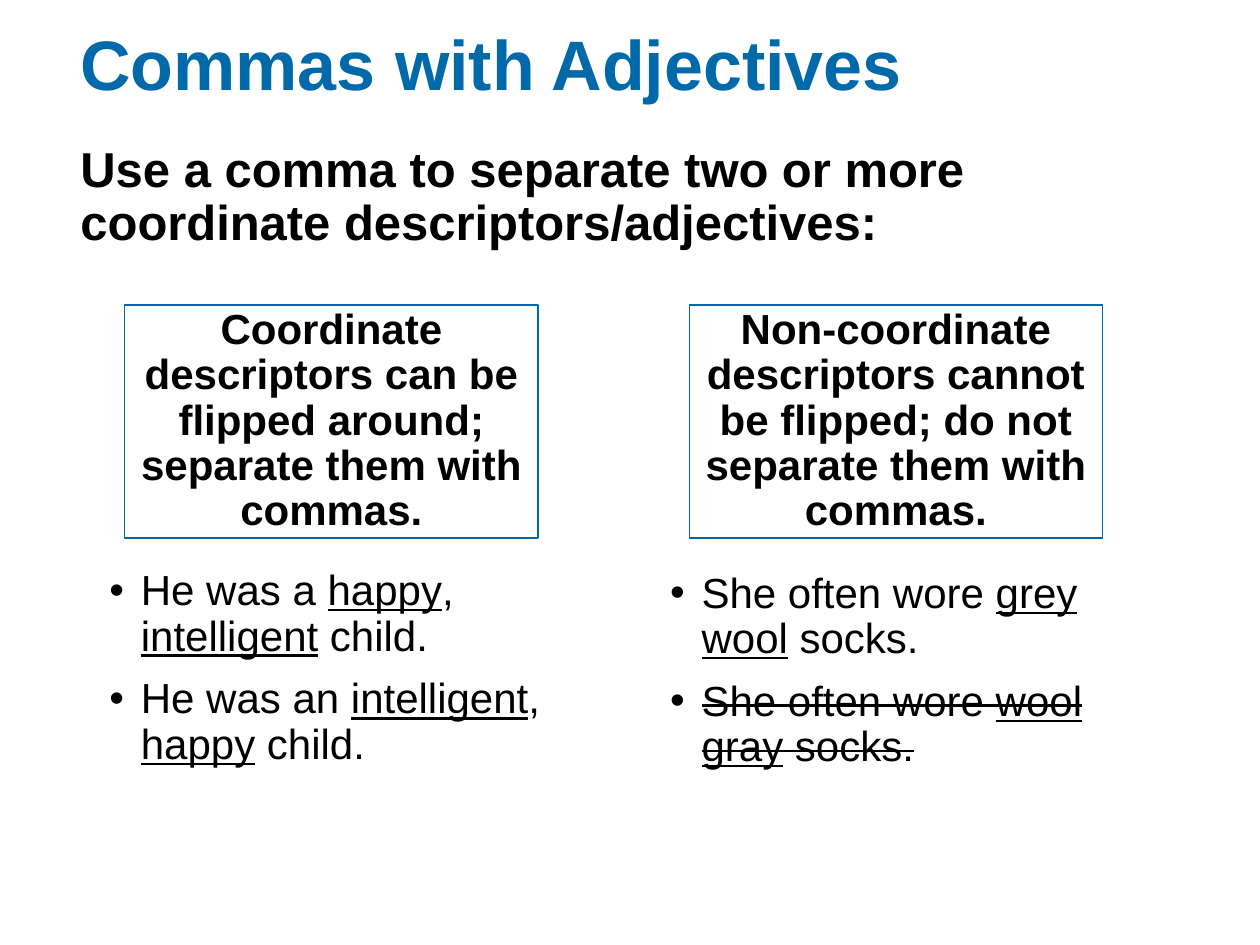
import pptx
import pptx.util
import pptx.dml.color
import pptx.enum.shapes
import pptx.enum.text
from lxml import etree

Inches, Pt = pptx.util.Inches, pptx.util.Pt
RGBColor = pptx.dml.color.RGBColor
Anchor = pptx.enum.text.MSO_ANCHOR
Align = pptx.enum.text.PP_ALIGN

BLUE = RGBColor(0x00, 0x69, 0xAA)
BLACK = RGBColor(0x00, 0x00, 0x00)
FONT = "Arial"

TITLE = "Commas with Adjectives"
RULE = "Use a comma to separate two or more coordinate descriptors/adjectives:"

# Runs marked "u" are underlined, "s" struck through.
COLUMNS = [
    {
        "head": "Coordinate descriptors can be flipped around; "
                "separate them with commas.",
        "box": (0.99, 2.42, 3.28, 1.85),
        "list": (0.77, 4.47, 3.73, 1.84),
        "items": [
            [("He was a ", ""), ("happy", "u"), (", ", ""),
             ("intelligent", "u"), (" child.", "")],
            [("He was an ", ""), ("intelligent", "u"), (", ", ""),
             ("happy", "u"), (" child.", "")],
        ],
    },
    {
        "head": "Non-coordinate descriptors cannot be flipped; "
                "do not separate them with commas.",
        "box": (5.47, 2.42, 3.28, 1.85),
        "list": (5.22, 4.49, 3.8, 1.8),
        "items": [
            [("She often wore ", ""), ("grey wool", "u"), (" socks.", "")],
            [("She often wore ", "s"), ("wool gray", "us"), (" socks.", "s")],
        ],
    },
]


def add_bullet(para):
    props = para._p.get_or_add_pPr()
    props.set("marL", str(Inches(0.25)))
    props.set("indent", str(-Inches(0.25)))
    space = props.nsmap["a"]
    etree.SubElement(props, f"{{{space}}}buFont", typeface=FONT)
    etree.SubElement(props, f"{{{space}}}buChar", char="•")


def write(shape, paras, size=24, color=BLACK, bold=False, bullet=False,
          align=Align.LEFT, anchor=Anchor.TOP):
    """Fill a shape with paragraphs, each a list of (text, marks) runs."""
    frame = shape.text_frame
    frame.word_wrap = True
    frame.vertical_anchor = anchor
    for i, runs in enumerate(paras):
        para = frame.add_paragraph() if i else frame.paragraphs[0]
        if bullet:
            add_bullet(para)
        para.alignment = align
        para.line_spacing = 0.9
        para.space_before = Pt(10 if i else 0)
        for text, marks in runs:
            run = para.add_run()
            run.text = text
            font = run.font
            font.name, font.size, font.bold = FONT, Pt(size), bold
            font.color.rgb = color
            font.underline = "u" in marks
            if "s" in marks:
                run._r.get_or_add_rPr().set("strike", "sngStrike")


def add_text(slide, at, paras, **style):
    write(slide.shapes.add_textbox(*map(Inches, at)), paras, **style)


def add_box(slide, at, text):
    kind = pptx.enum.shapes.MSO_SHAPE.RECTANGLE
    box = slide.shapes.add_shape(kind, *map(Inches, at))
    box.shadow.inherit = False
    box.fill.background()
    box.line.color.rgb = BLUE
    box.line.width = Pt(0.75)
    write(box, [[(text, "")]], bold=True, align=Align.CENTER,
          anchor=Anchor.MIDDLE)


def main():
    deck = pptx.Presentation()
    deck.slide_width, deck.slide_height = Inches(10), Inches(7.5)
    slide = deck.slides.add_slide(deck.slide_layouts[6])
    add_text(slide, (0.54, 0.29, 8.93, 0.5), [[(TITLE, "")]], size=40,
             color=BLUE, bold=True, anchor=Anchor.MIDDLE)
    add_text(slide, (0.54, 1.1, 8.93, 5.06), [[(RULE, "")]], size=28,
             bold=True)
    for col in COLUMNS:
        add_text(slide, col["list"], col["items"], bullet=True)
        add_box(slide, col["box"], col["head"])
    deck.save("out.pptx")


if __name__ == "__main__":
    main()
